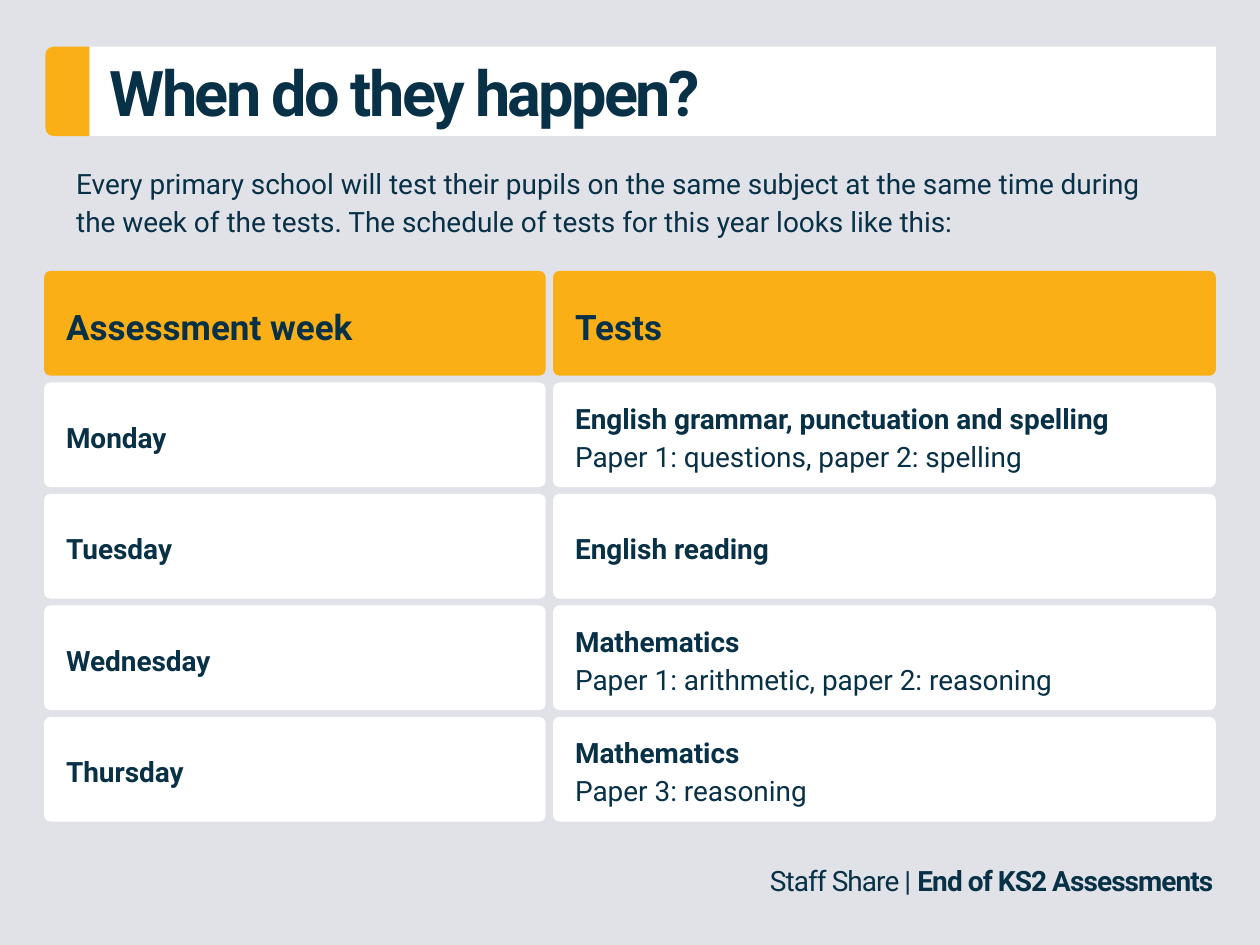
import pptx
import pptx.util
import pptx.dml.color
import pptx.enum.shapes
import pptx.enum.text

RGB = pptx.dml.color.RGBColor
NAVY = RGB(0x08, 0x31, 0x47)
GOLD = RGB(0xF9, 0xAF, 0x15)
WHITE = RGB(0xFF, 0xFF, 0xFF)
GREY = RGB(0xE1, 0xE2, 0xE7)

KIND = pptx.enum.shapes.MSO_SHAPE
ALIGN = pptx.enum.text.PP_ALIGN
ANCHOR = pptx.enum.text.MSO_ANCHOR
FONT = "Roboto"
WIDE = pptx.util.Inches(10)
HIGH = pptx.util.Inches(7.5)

# Boxes are (left, top, width, height) in percent of the slide's size.
HEAD = (3.6, 4.93, 92.9, 9.47)
INTRO = (3.5, 14.27, 92.9, 13.47)
GRID = (3.5, 28.67, 93, 58.27)
FOOT = (19.6, 90.67, 77.7, 4.93)
SPLIT = 39.8       # width of the first column
GAP_X, GAP_Y = 0.6, 0.73

ROWS = [
    ("Assessment week", ["Tests"]),
    ("Monday", ["English grammar, punctuation and spelling",
                "Paper 1: questions, paper 2: spelling"]),
    ("Tuesday", ["English reading"]),
    ("Wednesday", ["Mathematics", "Paper 1: arithmetic, paper 2: reasoning"]),
    ("Thursday", ["Mathematics", "Paper 3: reasoning"]),
]


def across(share):
    return round(WIDE * share / 100)


def down(share):
    return round(HIGH * share / 100)


def scale(box):
    left, top, width, height = box
    return across(left), down(top), across(width), down(height)


def panel(slide, kind, spot, fill=None, round_by=None):
    """Add a borderless shape at a spot given in EMU."""
    shape = slide.shapes.add_shape(kind, *spot)
    shape.shadow.inherit = False
    shape.line.fill.background()
    if fill is None:
        shape.fill.background()
    else:
        shape.fill.solid()
        shape.fill.fore_color.rgb = fill
    if round_by is not None:
        shape.adjustments[0] = round_by
    return shape


def frame(shape, pad, anchor):
    """Set padding as (side, top, bottom) shares of the slide."""
    side, top, base = pad
    style = {
        "word_wrap": True, "vertical_anchor": anchor,
        "margin_left": across(side), "margin_right": across(side),
        "margin_top": down(top), "margin_bottom": down(base),
    }
    for name, value in style.items():
        setattr(shape.text_frame, name, value)


def write(shape, lines, size, leading=None, align=ALIGN.LEFT, track=0):
    """Fill a shape with lines, each a list of (text, bold) runs."""
    text = shape.text_frame
    for i, line in enumerate(lines):
        para = text.add_paragraph() if i else text.paragraphs[0]
        para.alignment = align
        para.line_spacing = leading
        for words, bold in line:
            run = para.add_run()
            run.text = words
            style = {"name": FONT, "size": pptx.util.Pt(size), "bold": bold}
            for name, value in style.items():
                setattr(run.font, name, value)
            run.font.color.rgb = NAVY
            if track:
                run._r.get_or_add_rPr().set("spc", str(round(track * 100)))


def header(slide, box):
    left, top, width, height = scale(box)
    tab = across(3.5)
    bar = panel(slide, KIND.RECTANGLE,
                (left + tab, top, width - tab, height), WHITE)
    frame(bar, (1.6, 1.07, 0), ANCHOR.MIDDLE)
    write(bar, [[("When do they happen?", True)]], 36, 0.9, track=-1.5)
    # The tab lies on its side, so its width and height swap about its centre.
    shift = (height - tab) // 2
    end = panel(slide, KIND.ROUND_2_SAME_RECTANGLE,
                (left - shift, top + shift, height, tab), GOLD, 0.187)
    end.rotation = 270


def intro(slide, box):
    note = panel(slide, KIND.ROUNDED_RECTANGLE, scale(box), round_by=0.05)
    frame(note, (2.4, 2.67, 2.67), ANCHOR.TOP)
    words = ("Every primary school will test their pupils on the same subject "
             "at the same time during the week of the tests. The schedule of "
             "tests for this year looks like this:")
    write(note, [[(words, False)]], 16, 1.14)


def timetable(slide, box):
    left, top, width, height = box
    tall = (height - GAP_Y * (len(ROWS) - 1)) / len(ROWS)
    start = SPLIT + GAP_X
    cols = [(left, SPLIT), (left + start, width - start)]
    for i, (day, tests) in enumerate(ROWS):
        fill, size = (WHITE, 16) if i else (GOLD, 20)
        y = top + i * (tall + GAP_Y)
        for (x, wide), lines in zip(cols, ([day], tests)):
            card = panel(slide, KIND.ROUNDED_RECTANGLE,
                         scale((x, y, wide, tall)), fill, 0.06)
            frame(card, (1.6, 1.6, 1.6), ANCHOR.MIDDLE)
            runs = [[(line, n == 0)] for n, line in enumerate(lines)]
            write(card, runs, size, 1.14)


def footer(slide, box):
    label = slide.shapes.add_textbox(*scale(box))
    frame(label, (1, 0.67, 0.67), ANCHOR.TOP)
    write(label, [[("Staff Share | ", False), ("End of KS2 Assessments", True)]],
          16, align=ALIGN.RIGHT, track=-0.5)


def main():
    deck = pptx.Presentation()
    deck.slide_width, deck.slide_height = WIDE, HIGH
    slide = deck.slides.add_slide(deck.slide_layouts[6])
    slide.background.fill.solid()
    slide.background.fill.fore_color.rgb = GREY
    footer(slide, FOOT)
    header(slide, HEAD)
    intro(slide, INTRO)
    timetable(slide, GRID)
    deck.save("out.pptx")


if __name__ == "__main__":
    main()
